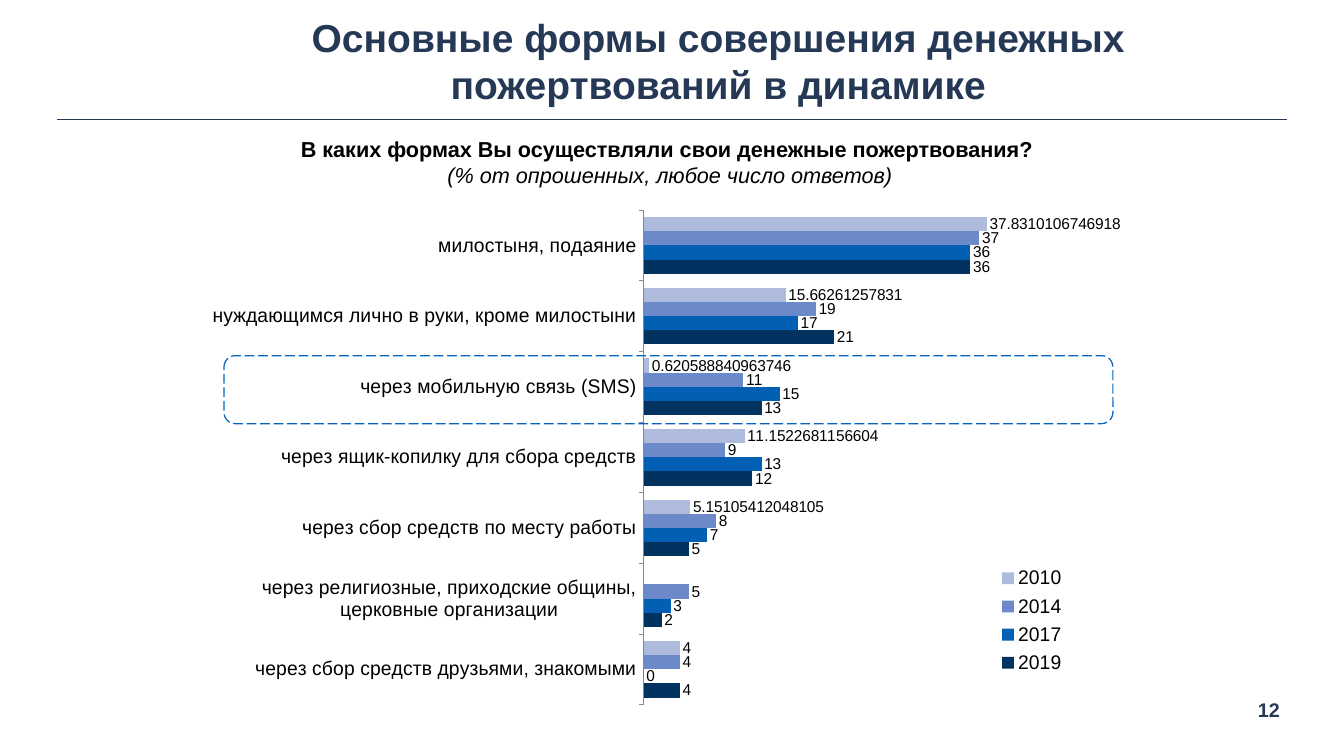
"""Build the slide on how forms of money donations changed over the years."""
from lxml.etree import SubElement
from pptx import Presentation
from pptx.chart.data import CategoryChartData
from pptx.dml.color import RGBColor
from pptx.enum.chart import XL_CHART_TYPE, XL_LABEL_POSITION, XL_LEGEND_POSITION, XL_TICK_MARK
from pptx.enum.dml import MSO_LINE
from pptx.enum.shapes import MSO_CONNECTOR, MSO_SHAPE
from pptx.enum.text import MSO_ANCHOR, PP_ALIGN
from pptx.oxml import parse_xml
from pptx.oxml.ns import nsdecls, qn
from pptx.util import Pt

PX = 9144
NAVY, BLACK = "253957", "000000"


def style(font, color, **formats):
    font.color.rgb = RGBColor.from_string(color)
    for name, value in {"name": "Arial", **formats}.items():
        setattr(font, name, value)


def add_text(box, lines, color, wrap=True, anchor=MSO_ANCHOR.TOP):
    frame = slide.shapes.add_textbox(*(n * PX for n in box)).text_frame
    margins = {f"margin_{side}": 9 * PX for side in ("left", "top", "right", "bottom")}
    for name, value in {**margins, "word_wrap": wrap, "vertical_anchor": anchor}.items():
        setattr(frame, name, value)
    for index, (text, formats) in enumerate(lines):
        paragraph = frame.add_paragraph() if index else frame.paragraphs[0]
        paragraph.alignment = PP_ALIGN.CENTER
        run = paragraph.add_run()
        run.text = text
        style(run.font, color, **formats)


deck = Presentation()
deck.slide_width, deck.slide_height = 1896 * PX, 1067 * PX
slide = deck.slides.add_slide(deck.slide_layouts[6])

title_rule = slide.shapes.add_connector(
    MSO_CONNECTOR.STRAIGHT, *(n * PX for n in (81, 169, 1816, 169)))
title_rule.line.color.rgb = RGBColor.from_string(NAVY)
title_rule.line.width = Pt(1)
SubElement(title_rule.element.spPr, qn("a:effectLst"))

add_text((1764, 976, 52, 52), [("12", {"size": Pt(20), "bold": True})], NAVY, wrap=False)
add_text((215, 32, 1597, 106),
         [("Основные формы совершения денежных пожертвований в динамике",
           {"size": Pt(39.6), "bold": True})],
         NAVY, anchor=MSO_ANCHOR.MIDDLE)
add_text((160, 183, 1570, 58),
         [("В каких формах Вы осуществляли свои денежные пожертвования? ",
           {"size": Pt(22), "bold": True}),
          ("(% от опрошенных, любое число ответов)", {"size": Pt(22), "italic": True})],
         BLACK)

donations = CategoryChartData()
donations.categories = [
    "через сбор средств друзьями, знакомыми",
    "через религиозные, приходские общины, церковные организации",
    "через сбор средств по месту работы",
    "через ящик-копилку для сбора средств",
    "через мобильную связь (SMS)",
    "нуждающимся лично в руки, кроме милостыни",
    "милостыня, подаяние",
]
years = [
    ("2019", "013260", [4, 2, 5, 12, 13, 21, 36]),
    ("2017", "035FB4", [0, 3, 7, 13, 15, 17, 36]),
    ("2014", "6C8ACA", [4, 5, 8, 9, 11, 19, 37]),
    ("2010", "AFBBDD", [4, None, 5.15, 11.15, 0.62, 15.66, 37.83]),
]
for year, _, shares in years:
    donations.add_series(year, shares)
chart = slide.shapes.add_chart(
    XL_CHART_TYPE.BAR_CLUSTERED, *(n * PX for n in (289, 296, 1294, 699)), donations).chart
style(chart.font, BLACK, size=Pt(16))
chart.has_title = False

bars = chart.plots[0]
for name, value in {"gap_width": 100, "overlap": 0, "vary_by_categories": False}.items():
    setattr(bars, name, value)
for series, (_, color, _) in zip(bars.series, years):
    series.format.fill.solid()
    series.format.fill.fore_color.rgb = RGBColor.from_string(color)
    series.invert_if_negative = False
    label_formats = {"show_value": True, "position": XL_LABEL_POSITION.OUTSIDE_END,
                     "number_format": "General", "number_format_is_linked": False}
    for name, value in label_formats.items():
        setattr(series.data_labels, name, value)
    style(series.data_labels.font, BLACK, size=Pt(16))

long_labels = ["5.15105412048105", "11.1522681156604", "0.620588840963746",
               "15.66261257831", "37.8310106746918"]
for place, text in enumerate(long_labels, start=2):
    label = bars.series[3].points[place].data_label
    run = label.text_frame.paragraphs[0].add_run()
    run.text = text
    style(run.font, BLACK, size=Pt(16))
    label.position = XL_LABEL_POSITION.OUTSIDE_END

forms = chart.category_axis
forms.major_tick_mark = XL_TICK_MARK.OUTSIDE
forms.format.line.color.rgb = RGBColor.from_string("888888")
forms.format.line.width = Pt(0.75)
style(forms.tick_labels.font, BLACK, size=Pt(20))
percent_formats = {"visible": False, "has_major_gridlines": False,
                   "minimum_scale": 0, "maximum_scale": 40}
for name, value in percent_formats.items():
    setattr(chart.value_axis, name, value)

chart.has_legend = True
legend = chart.legend
legend.position = XL_LEGEND_POSITION.RIGHT
legend.include_in_layout = False
style(legend.font, BLACK, size=Pt(20))

plot_area = chart.element.chart.plotArea
for part in (plot_area, legend._element):
    for old_layout in part.findall(qn("c:layout")):
        part.remove(old_layout)
layouts = [
    (plot_area, 0, '<c:layoutTarget val="inner"/>', (0.488, 0, 0.404, 1)),
    (legend._element, 1, "", (0.88, 0.71, 0.08, 0.24)),
]
for part, place, target, (x, y, w, h) in layouts:
    part.insert(place, parse_xml(
        f'<c:layout {nsdecls("c")}><c:manualLayout>{target}'
        '<c:xMode val="edge"/><c:yMode val="edge"/>'
        f'<c:x val="{x}"/><c:y val="{y}"/><c:w val="{w}"/><c:h val="{h}"/>'
        '</c:manualLayout></c:layout>'))

sms_frame = slide.shapes.add_shape(
    MSO_SHAPE.ROUNDED_RECTANGLE, *(n * PX for n in (316, 502, 1254, 96)))
sms_frame.shadow.inherit = False
sms_frame.fill.background()
sms_frame.line.color.rgb = RGBColor.from_string("0365C0")
sms_frame.line.width = Pt(1.25)
sms_frame.line.dash_style = MSO_LINE.LONG_DASH

deck.save("out.pptx")
